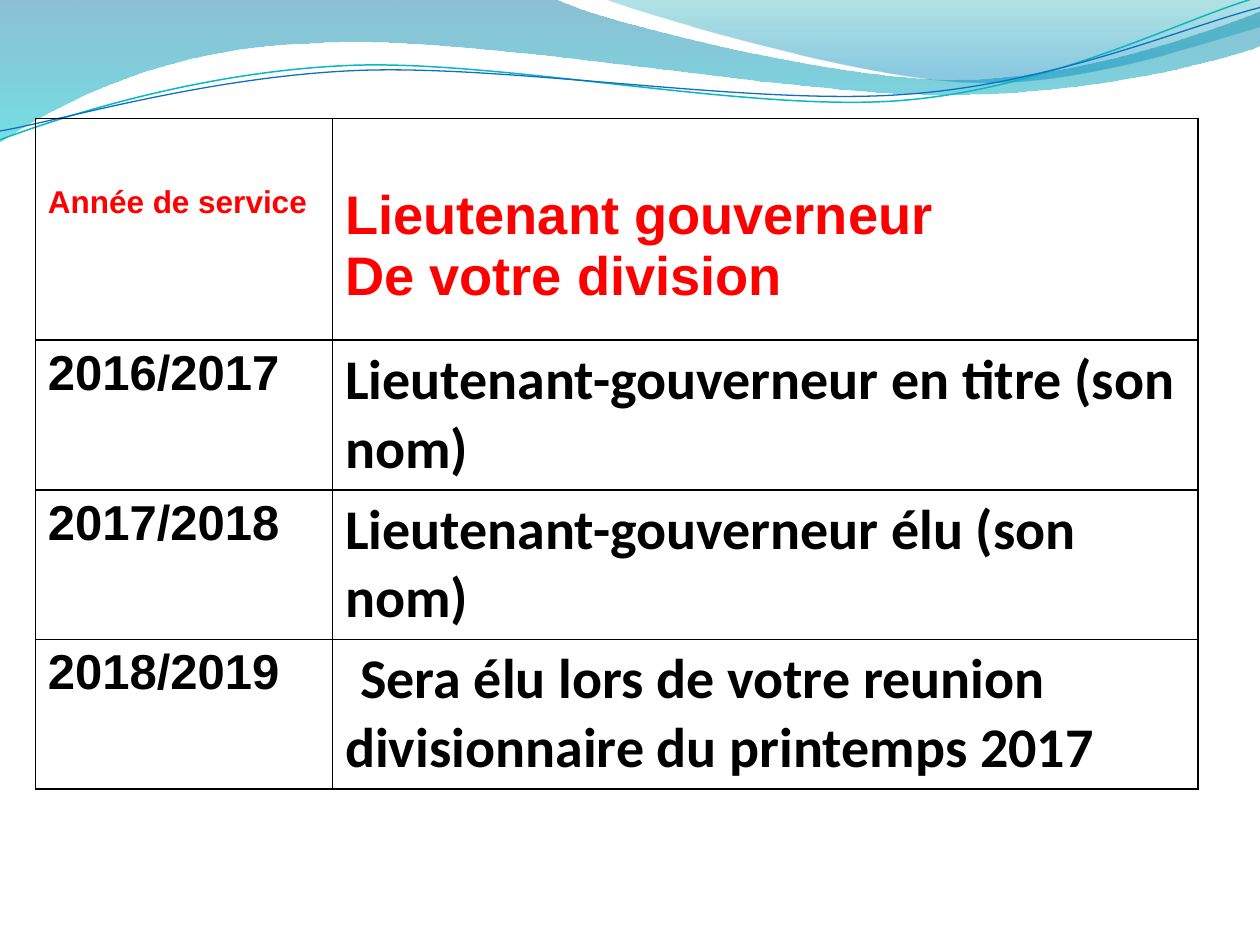
"""Build a slide with a wave header and a table of lieutenant governors by year of service."""
from dataclasses import dataclass

from lxml import etree
from pptx import Presentation
from pptx.dml.color import RGBColor
from pptx.oxml.ns import qn
from pptx.util import Inches, Pt

BLANK_LAYOUT = 6
BORDER_SIDES = ("a:lnL", "a:lnR", "a:lnT", "a:lnB")


@dataclass(frozen=True)
class Theme:
    heading: str = "FF0000"
    body: str = "000000"
    border: str = "000000"
    border_pt: float = 1
    sans: str = "Arial"
    text: str = "Calibri"
    small: float = 18
    year: float = 28
    title: float = 31
    name: float = 32


@dataclass(frozen=True)
class Stop:
    position: float
    color: str
    opacity: int


@dataclass(frozen=True)
class Wave:
    start: tuple
    segments: tuple
    stops: tuple = ()
    line: str = ""
    width: float = 0


@dataclass(frozen=True)
class Style:
    font: str
    size: float
    color: str


THEME = Theme()
HEADER_SMALL = Style(THEME.sans, THEME.small, THEME.heading)
HEADER_LARGE = Style(THEME.sans, THEME.title, THEME.heading)
YEAR = Style(THEME.sans, THEME.year, THEME.body)
NAME = Style(THEME.text, THEME.name, THEME.body)

WAVES = (
    Wave(
        (0, 0),
        (
            (4.4, -0.01),
            (4.76, 0.17, 6.64, 0.63, 7.58, 0.63),
            (8.53, 0.63, 9.58, 0.26, 10, 0.09),
            (10.01, 0.36),
            (9.83, 0.44, 8.7, 0.76, 7.46, 0.75),
            (6.22, 0.75, 3.82, 0.28, 2.57, 0.34),
            (1.29, 0.36, 0.46, 0.83, -0.01, 1.13),
        ),
        stops=(Stop(0, "0074A1", 45), Stop(1, "00C6CF", 55)),
    ),
    Wave(
        (4.79, -0.01),
        (
            (5.09, 0.11, 6.82, 0.62, 7.69, 0.65),
            (8.56, 0.69, 9.61, 0.32, 10, 0.21),
            (10, 0),
        ),
        stops=(Stop(0, "00A1A9", 30), Stop(0.8, "008BBF", 45)),
    ),
    Wave(
        (0, 1.11),
        (
            (0.48, 0.93, 1.58, 0.57, 2.77, 0.52),
            (3.95, 0.47, 5.93, 0.89, 7.13, 0.8),
            (8.33, 0.71, 9.38, 0.15, 9.98, -0.02),
        ),
        line="0AB8BF",
        width=0.85,
    ),
    Wave(
        (0, 1.04),
        (
            (0.47, 0.96, 1.64, 0.61, 2.83, 0.56),
            (4.03, 0.51, 5.97, 0.84, 7.17, 0.75),
            (8.36, 0.67, 9.41, 0.21, 10, 0.06),
        ),
        line="0F6FC6",
        width=0.75,
    ),
)

COL_WIDTHS = (2.36, 6.87)
HEADER_HEIGHT, ROW_HEIGHT = 1.76, 1.18
HEADER_TOP_MARGIN = 0.53
LAST_ROW_INDENT = 0.12
HEADER = ("Année de service", "Lieutenant gouverneur\nDe votre division")
ROWS = (
    ("2016/2017", "Lieutenant-gouverneur en titre (son nom)"),
    ("2017/2018", "Lieutenant-gouverneur élu (son nom)"),
    ("2018/2019", "Sera élu lors de votre reunion divisionnaire du printemps 2017"),
)


def bend_segments(sp, segments: tuple) -> None:
    """Join each run of three line points that describes a curve into one cubic segment."""
    lines = iter(list(sp.element.spPr.iter(qn("a:lnTo"))))
    for segment in segments:
        group = [next(lines) for _ in range(len(segment) // 2)]
        if len(group) == 1:
            continue
        curve = etree.Element(qn("a:cubicBezTo"))
        group[0].addprevious(curve)
        for line in group:
            curve.append(line[0])
            line.getparent().remove(line)


def add_wave(s, wave: Wave) -> None:
    """Draw a wave as a gradient area or as an open line."""
    points = [
        (Inches(segment[i]), Inches(segment[i + 1]))
        for segment in wave.segments
        for i in range(0, len(segment), 2)
    ]
    builder = s.shapes.build_freeform(*map(Inches, wave.start))
    builder.add_line_segments(points, close=bool(wave.stops))
    sp = builder.convert_to_shape()
    bend_segments(sp, wave.segments)
    sp.shadow.inherit = False
    if not wave.stops:
        sp.fill.background()
        sp.line.color.rgb = RGBColor.from_string(wave.line)
        sp.line.width = Pt(wave.width)
        return
    sp.line.fill.background()
    sp.fill.gradient()
    sp.fill.gradient_angle = 270
    for target, stop in zip(sp.fill.gradient_stops, wave.stops):
        target.position = stop.position
        target.color.rgb = RGBColor.from_string(stop.color)
    for color, stop in zip(sp.element.spPr.iter(qn("a:srgbClr")), wave.stops):
        etree.SubElement(color, qn("a:alpha"), val=str(stop.opacity * 1000))


def set_borders(cell) -> None:
    """Give all four sides of a cell the theme border."""
    tc_pr = cell._tc.get_or_add_tcPr()
    for index, side in enumerate(BORDER_SIDES):
        ln = etree.Element(qn(side), w=str(Pt(THEME.border_pt)))
        fill = etree.SubElement(ln, qn("a:solidFill"))
        etree.SubElement(fill, qn("a:srgbClr"), val=THEME.border)
        tc_pr.insert(index, ln)


def fill_cell(cell, text: str, style: Style) -> None:
    """Write and format a cell's text on a clear, bordered ground."""
    cell.fill.background()
    set_borders(cell)
    cell.text_frame.text = text
    for p in cell.text_frame.paragraphs:
        for r in p.runs:
            r.font.name = style.font
            r.font.size = Pt(style.size)
            r.font.bold = True
            r.font.color.rgb = RGBColor.from_string(style.color)


def add_service_table(s) -> None:
    """Add the table of service years and lieutenant governors."""
    height = HEADER_HEIGHT + len(ROWS) * ROW_HEIGHT
    table = s.shapes.add_table(
        len(ROWS) + 1, len(COL_WIDTHS), Inches(0.28), Inches(0.94), Inches(sum(COL_WIDTHS)), Inches(height)
    ).table
    table.first_row = table.horz_banding = False
    for column, width in zip(table.columns, COL_WIDTHS):
        column.width = Inches(width)
    for i, texts in enumerate((HEADER, *ROWS)):
        table.rows[i].height = Inches(ROW_HEIGHT if i else HEADER_HEIGHT)
        styles = (YEAR, NAME) if i else (HEADER_SMALL, HEADER_LARGE)
        for j, (text, style) in enumerate(zip(texts, styles)):
            cell = table.cell(i, j)
            fill_cell(cell, text, style)
            if i == 0:
                cell.margin_top = Inches(HEADER_TOP_MARGIN)
    p = table.cell(len(ROWS), 1).text_frame.paragraphs[0]
    p._p.get_or_add_pPr().set("indent", str(Inches(LAST_ROW_INDENT)))


def main() -> None:
    """Build and save the slide."""
    prs = Presentation()
    prs.slide_width, prs.slide_height = Inches(10), Inches(7.5)
    s = prs.slides.add_slide(prs.slide_layouts[BLANK_LAYOUT])
    for wave in WAVES:
        add_wave(s, wave)
    add_service_table(s)
    prs.save("out.pptx")


if __name__ == "__main__":
    main()
